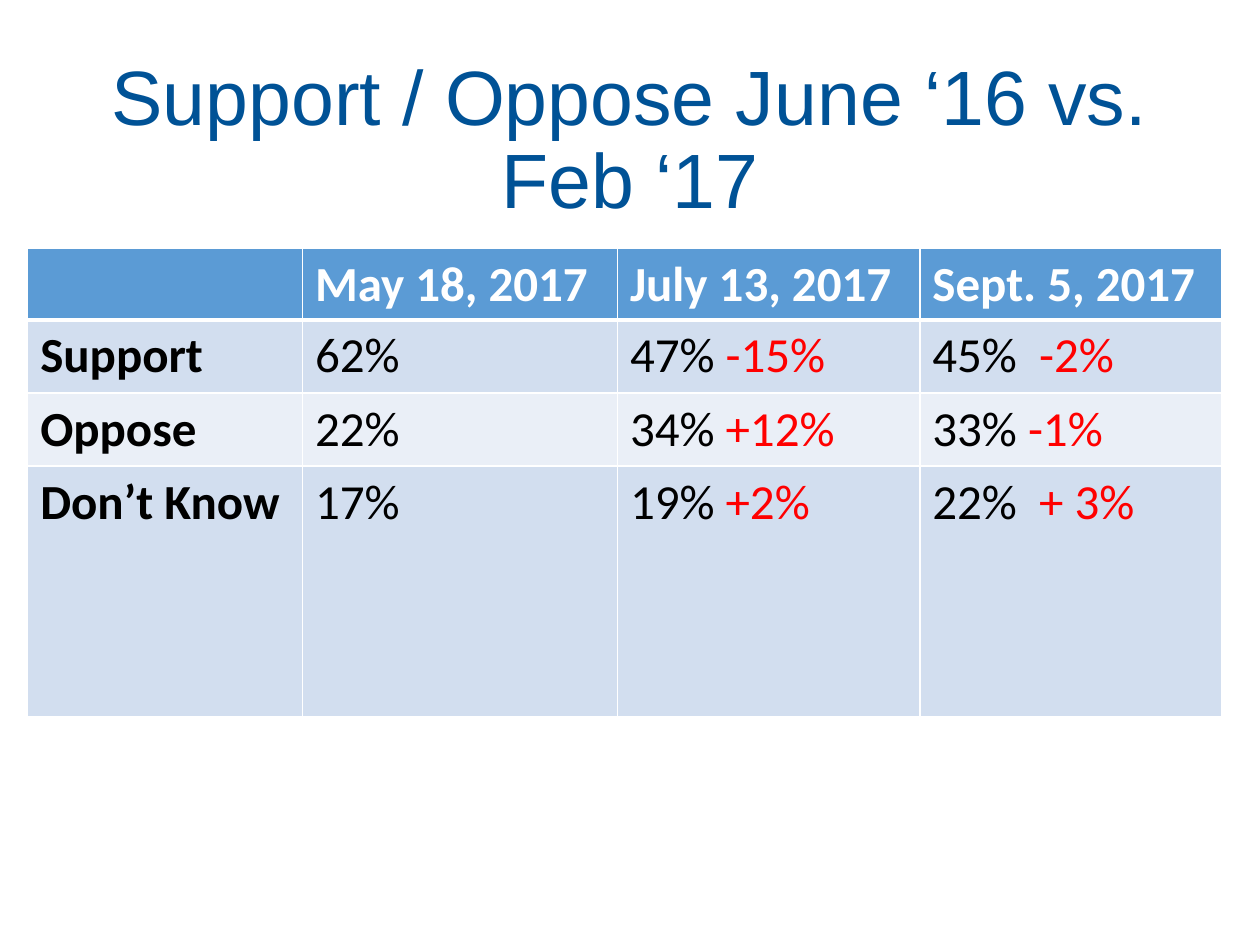
import pptx
import pptx.dml.color
import pptx.enum.text
import pptx.oxml
import pptx.oxml.ns
import pptx.util
from pptx.util import Inches

COLORS = {
    "title": "005296",
    "header": "5B9BD5",
    "band_dark": "D2DEEF",
    "band_light": "EAEFF7",
    "text": "000000",
    "change": "FF0000",
    "white": "FFFFFF",
}
COLUMN_WIDTHS = [2.18, 2.5, 2.4, 2.4]
ROW_HEIGHTS = [0.57, 0.58, 0.58, 1.99]
ROWS = [
    [("",), ("May 18, 2017",), ("July 13, 2017",), ("Sept. 5, 2017",)],
    [("Support",), ("62%",), ("47% ", "-15%"), ("45%  ", "-2%")],
    [("Oppose",), ("22%",), ("34% ", "+12%"), ("33% ", "-1%")],
    [("Don’t Know",), ("17%",), ("19% ", "+2%"), ("22%  ", "+ 3%")],
]


def rgb(name):
    """Return the named palette colour."""
    return pptx.dml.color.RGBColor.from_string(COLORS[name])


def format_run(run, font_name, size, color, bold=False):
    """Set the font of one run."""
    run.font.name = font_name
    run.font.size = pptx.util.Pt(size)
    run.font.bold = bold
    run.font.color.rgb = rgb(color)


def set_borders(cell, bottom_width):
    """Draw white borders around a cell, with the given bottom width in points."""
    properties = cell._tc.get_or_add_tcPr()
    for side, width in (("L", 1), ("R", 1), ("T", 1), ("B", bottom_width)):
        properties.append(pptx.oxml.parse_xml(
            f'<a:ln{side} {pptx.oxml.ns.nsdecls("a")} w="{pptx.util.Pt(width)}">'
            f'<a:solidFill><a:srgbClr val="{COLORS["white"]}"/></a:solidFill>'
            f'</a:ln{side}>'
        ))


def add_title(slide, left, top, width, height):
    """Add the centred slide title."""
    shape = slide.shapes.add_textbox(left, top, width, height)
    text_frame = shape.text_frame
    text_frame.word_wrap = True
    text_frame.vertical_anchor = pptx.enum.text.MSO_ANCHOR.MIDDLE
    text_frame.text = "Support / Oppose June ‘16 vs. Feb ‘17"
    paragraph = text_frame.paragraphs[0]
    paragraph.alignment = pptx.enum.text.PP_ALIGN.CENTER
    paragraph.line_spacing = 0.9
    format_run(paragraph.runs[0], "Arial", 44, "title")


def fill_cell(cell, parts, row_index, column_index):
    """Style one cell and write its value and optional change."""
    is_header = row_index == 0
    band = "band_dark" if row_index % 2 else "band_light"
    set_borders(cell, 3 if is_header or row_index == 1 and False else 1)
    cell.fill.solid()
    cell.fill.fore_color.rgb = rgb("header" if is_header else band)
    value_color = "white" if is_header else "text"
    paragraph = cell.text_frame.paragraphs[0]
    for text, color in zip(parts, (value_color, "change")):
        if text:
            run = paragraph.add_run()
            run.text = text
            format_run(run, "Calibri", 28, color, is_header or column_index == 0)


def add_poll_table(slide, left, top, width, height):
    """Add the table of poll results."""
    table = slide.shapes.add_table(
        len(ROWS), len(COLUMN_WIDTHS), left, top, width, height
    ).table
    for column, column_width in zip(table.columns, COLUMN_WIDTHS):
        column.width = Inches(column_width)
    for row, row_height in zip(table.rows, ROW_HEIGHTS):
        row.height = Inches(row_height)
    for row_index, row in enumerate(ROWS):
        for column_index, parts in enumerate(row):
            fill_cell(table.cell(row_index, column_index), parts, row_index, column_index)


def main():
    """Build and save the presentation."""
    presentation = pptx.Presentation()
    presentation.slide_width = Inches(10)
    presentation.slide_height = Inches(7.5)
    slide = presentation.slides.add_slide(presentation.slide_layouts[6])
    add_title(slide, Inches(0.69), Inches(0.4), Inches(8.62), Inches(1.45))
    add_poll_table(
        slide, Inches(0.22), Inches(1.97),
        Inches(sum(COLUMN_WIDTHS)), Inches(sum(ROW_HEIGHTS)),
    )
    presentation.save("out.pptx")


if __name__ == "__main__":
    main()
